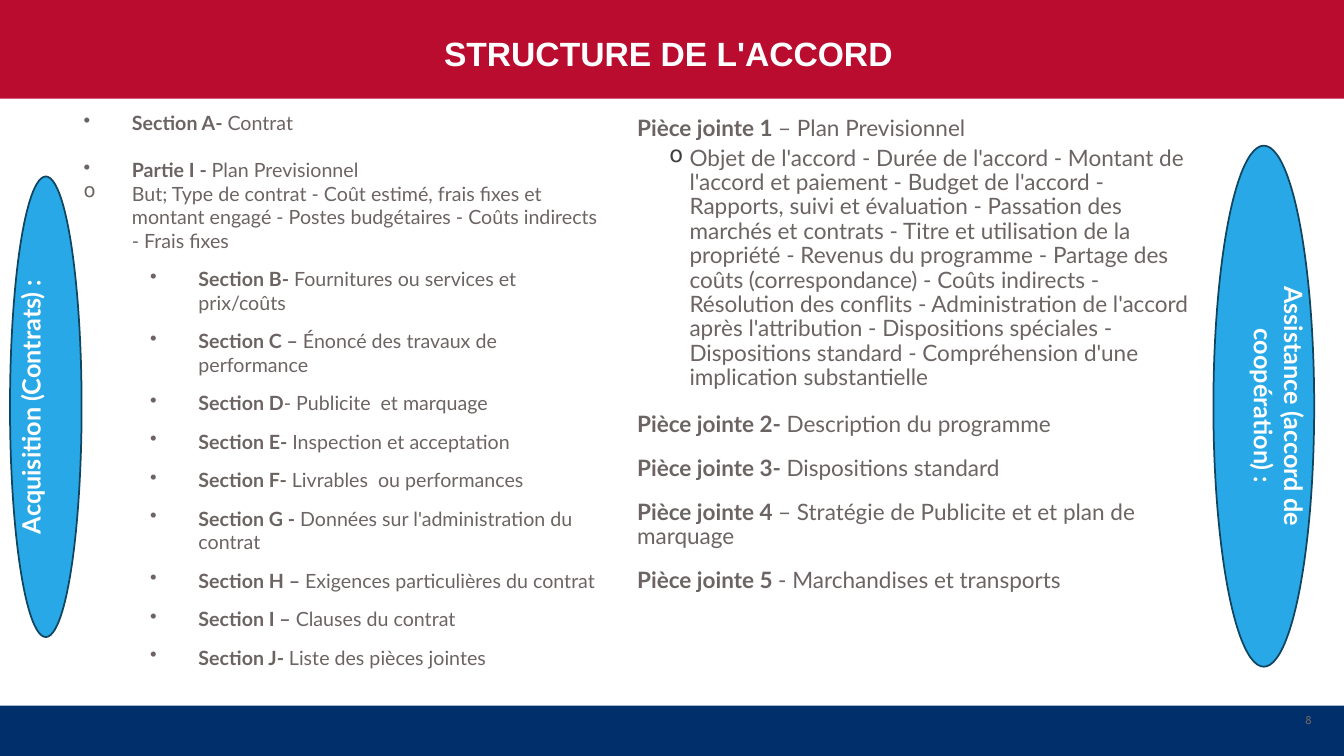
from lxml import etree
from pptx import Presentation
from pptx import util as u
from pptx.dml.color import RGBColor
from pptx.enum import shapes, text
from pptx.oxml import ns

WIDTH, HEIGHT = u.Inches(13.33), u.Inches(7.5)
COLUMN, ROW = WIDTH / 100, HEIGHT / 100  # grid of 100 columns by 100 rows

COLORS = {
    "red": "BA0C2F",
    "navy": "002F6C",
    "sky": "29A8E7",
    "outline": "114661",
    "grey": "6C6463",
    "dark": "3F3F3F",
    "white": "FFFFFF",
}

PARTS = [
    ("Section A- ", "Contrat", "•", 0),
    ("Partie I - ", "Plan Previsionnel", "•", 16.8),
    ("", "But; Type de contrat - Coût estimé, frais fixes et montant engagé - "
     "Postes budgétaires - Coûts indirects - Frais fixes", "o", 0),
]
SECTIONS = [
    ("Section B- ", "Fournitures ou services et prix/coûts"),
    ("Section C – ", "Énoncé des travaux de performance"),
    ("Section D", "- Publicite  et marquage"),
    ("Section E- ", "Inspection et acceptation"),
    ("Section F- ", "Livrables  ou performances"),
    ("Section G - ", "Données sur l'administration du contrat"),
    ("Section H – ", "Exigences particulières du contrat"),
    ("Section I – ", "Clauses du contrat"),
    ("Section J- ", "Liste des pièces jointes"),
]
FIRST_ATTACHMENT = ("Pièce jointe 1 ", "– Plan Previsionnel")
PLAN_CONTENT = (
    "Objet de l'accord - Durée de l'accord - Montant de l'accord et paiement - "
    "Budget de l'accord - Rapports, suivi et évaluation - Passation des marchés "
    "et contrats - Titre et utilisation de la propriété - Revenus du programme - "
    "Partage des coûts (correspondance) - Coûts indirects - Résolution des "
    "conflits - Administration de l'accord après l'attribution - Dispositions "
    "spéciales - Dispositions standard - Compréhension d'une implication "
    "substantielle"
)
OTHER_ATTACHMENTS = [
    ("Pièce jointe 2- ", "Description du programme", 16),
    ("Pièce jointe 3- ", "Dispositions standard", 14),
    ("Pièce jointe 4 ", "– Stratégie de Publicite et et plan de marquage", 14),
    ("Pièce jointe 5 ", "- Marchandises et transports", 14),
]


def color(name):
    return RGBColor.from_string(COLORS[name])


def place(left, top, width, height):
    """Turn grid columns and rows into slide lengths."""
    return [round(n) for n in (left * COLUMN, top * ROW, width * COLUMN, height * ROW)]


def set_frame(box, insets, anchor):
    frame = box.text_frame
    frame.word_wrap = True
    frame.auto_size = text.MSO_AUTO_SIZE.NONE
    frame.vertical_anchor = anchor
    (frame.margin_left, frame.margin_top,
     frame.margin_right, frame.margin_bottom) = map(u.Inches, insets)


def add_box(page, area, insets, anchor=text.MSO_ANCHOR.TOP):
    box = page.shapes.add_textbox(*place(*area))
    set_frame(box, insets, anchor)
    return box


def add_figure(page, kind, area, fill, outline=None, rotation=0,
               insets=(0.1, 0.05, 0.1, 0.05)):
    figure = page.shapes.add_shape(kind, *place(*area))
    figure.shadow.inherit = False
    figure.rotation = rotation
    figure.fill.solid()
    figure.fill.fore_color.rgb = color(fill)
    if outline:
        figure.line.color.rgb = color(outline)
        figure.line.width = u.Pt(1.25)
    else:
        figure.line.fill.background()
    set_frame(figure, insets, text.MSO_ANCHOR.MIDDLE)
    return figure


def add_bullet(para, sign, tint):
    properties = para._p.get_or_add_pPr()
    holder = etree.SubElement(properties, ns.qn("a:buClr"))
    etree.SubElement(holder, ns.qn("a:srgbClr"), val=COLORS[tint])
    etree.SubElement(properties, ns.qn("a:buChar"), char=sign)


def write(box, *pieces, size, font="Lato", tint="grey", align=text.PP_ALIGN.LEFT,
          before=0, spacing=1.0, bullet=None, bullet_tint="grey", margin=0, indent=0):
    """Add a paragraph; each piece is a (words, bold) pair."""
    frame = box.text_frame
    para = frame.paragraphs[0]
    if para.runs:
        para = frame.add_paragraph()
    properties = para._p.get_or_add_pPr()
    properties.set("marL", str(u.Inches(margin)))
    properties.set("indent", str(u.Inches(indent)))
    if bullet:
        add_bullet(para, bullet, bullet_tint)
    para.alignment = align
    para.line_spacing = spacing
    para.space_before = u.Pt(before)
    for words, bold in pieces:
        if not words:
            continue
        span = para.add_run()
        span.text = words
        span.font.name = font
        span.font.size = u.Pt(size)
        span.font.bold = bold
        span.font.color.rgb = color(tint)


def add_contract_list(page):
    box = add_box(page, (4.05, 13.33, 41.86, 92.67), (0.1, 0.1, 0.1, 0.1))
    for label, words, sign, before in PARTS:
        write(box, (label, True), (words, False), size=14, before=before,
              bullet=sign, margin=0.67, indent=-0.48)
    for label, words in SECTIONS:
        write(box, (label, True), (words, False), size=14, before=10.7,
              bullet="•", margin=1.33, indent=-0.48)


def add_attachment_list(page):
    box = add_box(page, (46.66, 14.8, 42.39, 67.6), (0, 0.05, 0, 0.05))
    style = {"size": 16.1, "spacing": 0.9}
    label, words = FIRST_ATTACHMENT
    write(box, (label, True), (words, False), margin=0.1, **style)
    write(box, (PLAN_CONTENT, False), before=4, bullet="o", bullet_tint="dark",
          margin=0.62, indent=-0.2, **style)
    for label, words, before in OTHER_ATTACHMENTS:
        write(box, (label, True), (words, False), before=before, margin=0.1, **style)


def add_side_label(page, area, rotation, words):
    # The deep bottom inset lifts the words off the centre line
    oval = add_figure(page, shapes.MSO_SHAPE.OVAL, area, "sky", "outline", rotation,
                      insets=(0.1, 0.05, 0.1, 0.35))
    write(oval, (words, True), size=18, tint="white", align=text.PP_ALIGN.CENTER)


def main():
    deck = Presentation()
    deck.slide_width, deck.slide_height = WIDTH, HEIGHT
    page = deck.slides.add_slide(deck.slide_layouts[6])

    # Footer band and page number
    add_figure(page, shapes.MSO_SHAPE.RECTANGLE, (0, 93.33, 100, 6.67), "navy")
    number = add_box(page, (75.02, 93.47, 23.33, 3.6), (0.1, 0.05, 0.1, 0.05),
                     text.MSO_ANCHOR.MIDDLE)
    write(number, ("8", False), size=8, font="Cabin", align=text.PP_ALIGN.RIGHT)

    # Two lists
    add_contract_list(page)
    add_attachment_list(page)

    # Title band
    title = add_figure(page, shapes.MSO_SHAPE.RECTANGLE, (0, 0, 100, 13.07), "red",
                       insets=(0.1, 0.13, 0.17, 0.05))
    write(title, ("STRUCTURE DE L'ACCORD", True), size=24, font="Arial",
          tint="white", align=text.PP_ALIGN.CENTER)

    # Upright labels at both sides
    add_side_label(page, (-13.73, 49.07, 34.28, 9.47), 270, "Acquisition (Contrats) :")
    add_side_label(page, (74.64, 47.07, 38.78, 13.33), 90,
                   "Assistance (accord de coopération) :")

    deck.save("out.pptx")


if __name__ == "__main__":
    main()
